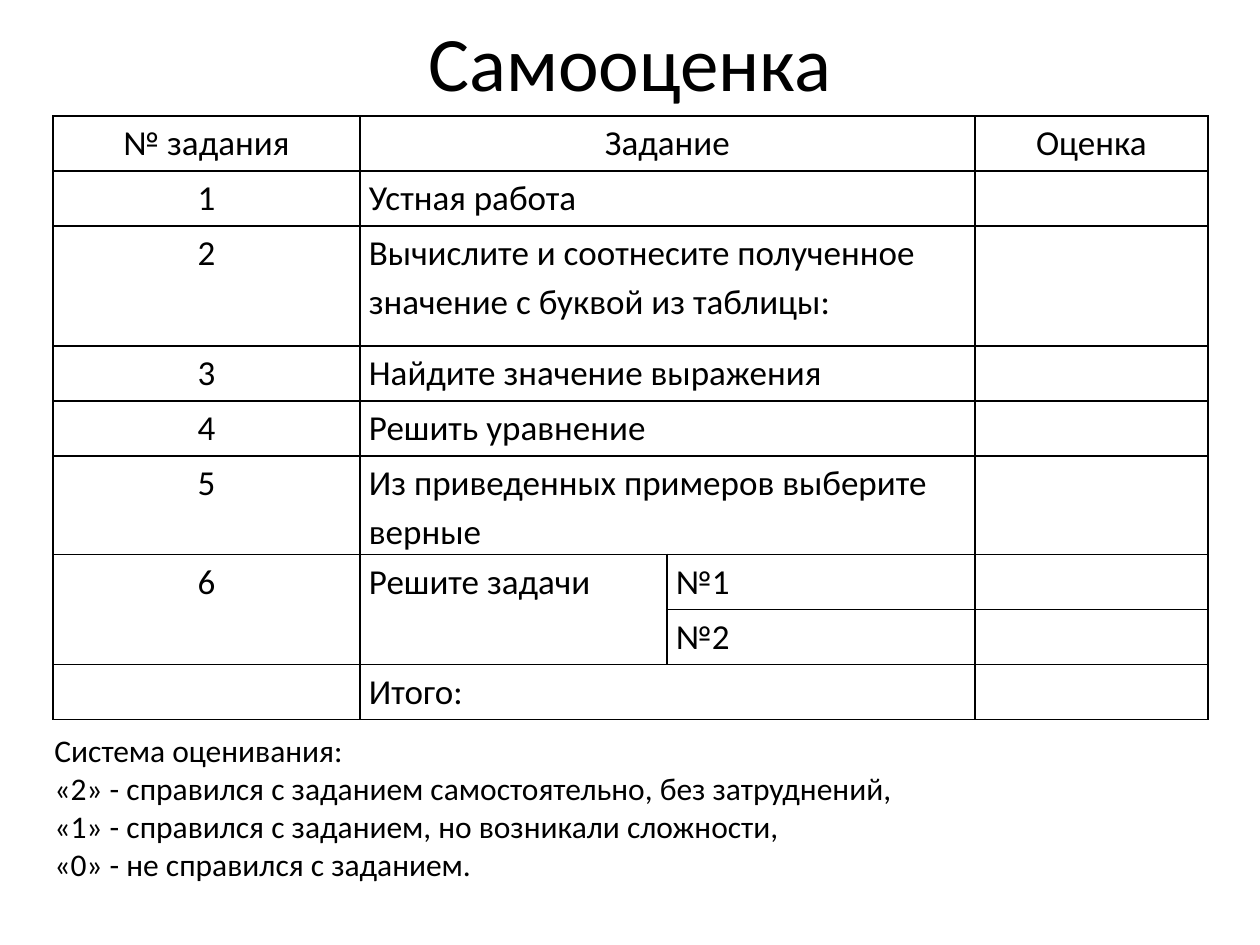
import lxml.etree
import pptx
import pptx.dml.color
import pptx.enum.text
import pptx.oxml.ns
import pptx.util

BLACK = pptx.dml.color.RGBColor(0x00, 0x00, 0x00)
FONT = "Calibri"
PIXELS_PER_INCH = 126
COLUMN_WIDTHS = [307, 307, 308, 233]
ROW_HEIGHTS = [55, 55, 120, 55, 55, 98, 55, 55, 55]
ROWS = [
    ["№ задания", "Задание", "", "Оценка"],
    ["1", "Устная работа", "", ""],
    ["2", "Вычислите и соотнесите полученное значение с буквой из таблицы:", "", ""],
    ["3", "Найдите значение выражения", "", ""],
    ["4", "Решить уравнение", "", ""],
    ["5", "Из приведенных примеров выберите верные", "", ""],
    ["6", "Решите задачи", "№1", ""],
    ["", "", "№2", ""],
    ["", "Итого:", "", ""],
]
TASK_ROWS = [6, 7]
GRADING_LINES = [
    "Система оценивания:",
    "«2» - справился с заданием самостоятельно, без затруднений,",
    "«1» - справился с заданием, но возникали сложности,",
    "«0» - не справился с заданием.",
]


def px(length):
    """Turn pixels into EMU."""
    return pptx.util.Emu(round(length * 914400 / PIXELS_PER_INCH))


def place(shape, box):
    """Move a shape to a box of left, top, width and height."""
    shape.left, shape.top, shape.width, shape.height = map(px, box)


def add_run(paragraph, text, size):
    """Add one formatted run to a paragraph."""
    run = paragraph.add_run()
    run.text = text
    run.font.name = FONT
    run.font.size = pptx.util.Pt(size)
    run.font.color.rgb = BLACK


def add_borders(cell):
    """Draw a thin black line on each side of a cell."""
    properties = cell._tc.get_or_add_tcPr()
    for side in ("a:lnL", "a:lnR", "a:lnT", "a:lnB"):
        line = lxml.etree.SubElement(
            properties, pptx.oxml.ns.qn(side), w=str(pptx.util.Pt(1)))
        fill = lxml.etree.SubElement(line, pptx.oxml.ns.qn("a:solidFill"))
        lxml.etree.SubElement(fill, pptx.oxml.ns.qn("a:srgbClr"), val=str(BLACK))


def add_title(slide, box):
    """Fill the title placeholder."""
    title = slide.shapes.title
    place(title, box)
    title.text_frame.vertical_anchor = pptx.enum.text.MSO_ANCHOR.MIDDLE
    paragraph = title.text_frame.paragraphs[0]
    paragraph.alignment = pptx.enum.text.PP_ALIGN.CENTER
    add_run(paragraph, "Самооценка", 44)


def fill_cell(cell, text, centred):
    """Format one table cell and write its text."""
    cell.margin_left = cell.margin_right = px(9)
    cell.margin_top = cell.margin_bottom = 0
    add_borders(cell)
    cell.fill.background()
    paragraph = cell.text_frame.paragraphs[0]
    paragraph.line_spacing = 1.15
    alignment = pptx.enum.text.PP_ALIGN
    paragraph.alignment = alignment.CENTER if centred else alignment.LEFT
    if text:
        add_run(paragraph, text, 20)


def add_score_table(slide, left, top):
    """Build the self-assessment table."""
    table = slide.shapes.add_table(
        len(ROWS), len(COLUMN_WIDTHS), px(left), px(top),
        px(sum(COLUMN_WIDTHS)), px(sum(ROW_HEIGHTS))).table
    table.first_row = table.horz_banding = False
    for column, width in zip(table.columns, COLUMN_WIDTHS):
        column.width = px(width)
    for row_index, texts in enumerate(ROWS):
        table.rows[row_index].height = px(ROW_HEIGHTS[row_index])
        for column_index, text in enumerate(texts):
            fill_cell(table.cell(row_index, column_index), text,
                      row_index == 0 or column_index == 0)
        if row_index not in TASK_ROWS:
            table.cell(row_index, 1).merge(table.cell(row_index, 2))
    for column_index in (0, 1):
        table.cell(TASK_ROWS[0], column_index).merge(
            table.cell(TASK_ROWS[-1], column_index))


def add_grading_key(slide, box):
    """Write the grading rules, one paragraph each."""
    text_frame = slide.shapes.add_textbox(*map(px, box)).text_frame
    text_frame.word_wrap = True
    text_frame.auto_size = pptx.enum.text.MSO_AUTO_SIZE.SHAPE_TO_FIT_TEXT
    for index, text in enumerate(GRADING_LINES):
        paragraph = text_frame.add_paragraph() if index else text_frame.paragraphs[0]
        add_run(paragraph, text, 18)


def main():
    """Build and save the presentation."""
    presentation = pptx.Presentation()
    presentation.slide_width = px(1260)
    presentation.slide_height = px(945)
    slide = presentation.slides.add_slide(presentation.slide_layouts[5])
    add_title(slide, (63, 0, 1134, 122))
    add_score_table(slide, 53, 116)
    add_grading_key(slide, (42, 725, 1166, 165))
    presentation.save("out.pptx")


if __name__ == "__main__":
    main()
